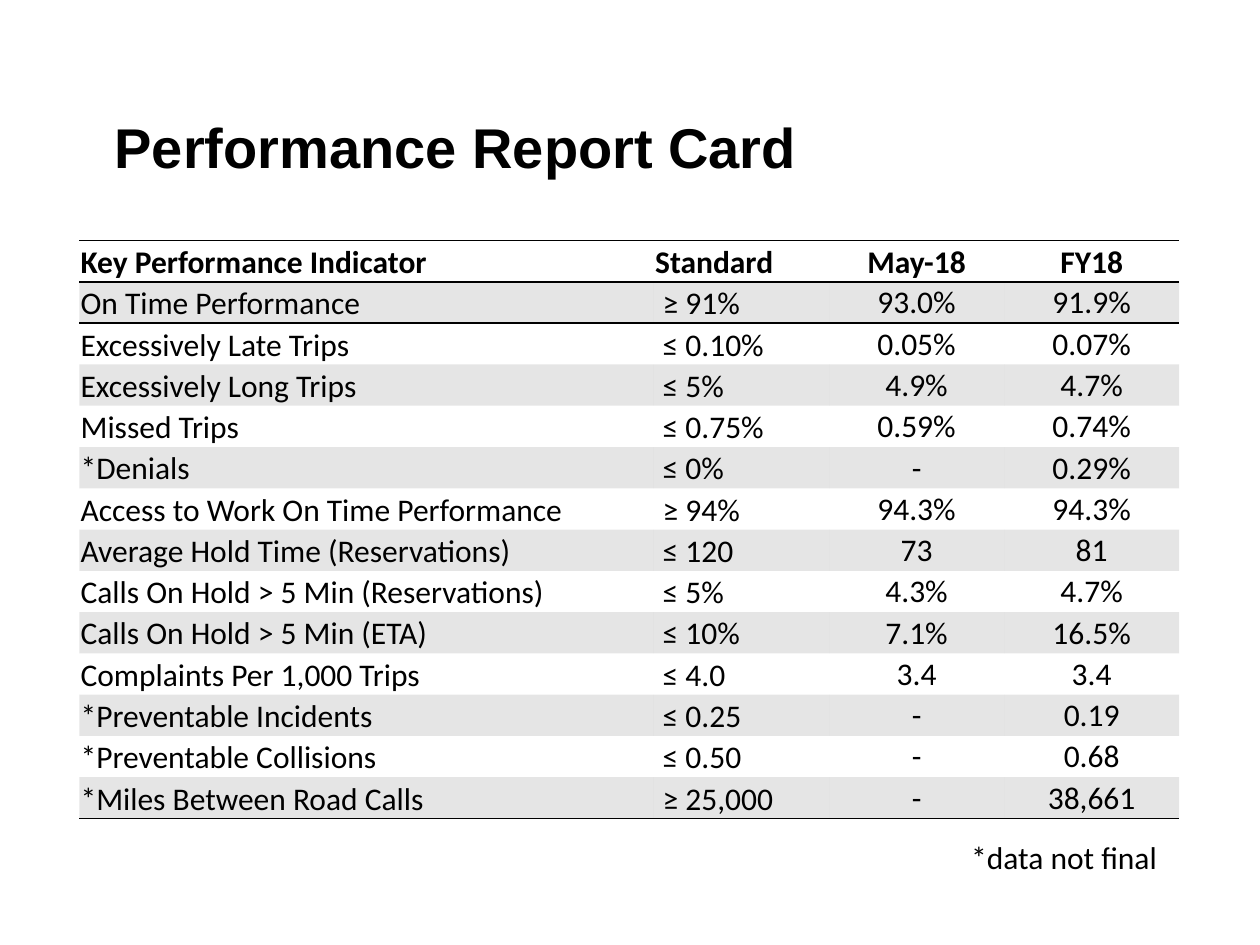
from dataclasses import dataclass

from lxml import etree
from pptx import Presentation
from pptx import util as u
from pptx.dml import color
from pptx.enum import text
from pptx.oxml import ns


@dataclass(frozen=True)
class Theme:
    ink: str = "000000"
    band: str = "808080"
    band_alpha: int = 20
    title_font: str = "Arial"
    body_font: str = "Calibri"
    title_size: int = 32
    body_size: int = 18
    rule_width: int = 1


THEME = Theme()
PLAIN_STYLE = "{2D5ABB26-0587-4C30-8999-92F81FD0307C}"
COLUMN_WIDTHS = (4.56, 1.39, 1.39, 1.39)
ROW_HEIGHT = 4.59 / 14

# Header, then one row per indicator
REPORT = (
    ("Key Performance Indicator", "Standard", "May-18", "FY18"),
    ("On Time Performance", "≥ 91%", "93.0%", "91.9%"),
    ("Excessively Late Trips", "≤ 0.10%", "0.05%", "0.07%"),
    ("Excessively Long Trips", "≤ 5%", "4.9%", "4.7%"),
    ("Missed Trips", "≤ 0.75%", "0.59%", "0.74%"),
    ("*Denials", "≤ 0%", "-", "0.29%"),
    ("Access to Work On Time Performance", "≥ 94%", "94.3%", "94.3%"),
    ("Average Hold Time (Reservations)", "≤ 120", "73", "81"),
    ("Calls On Hold > 5 Min (Reservations)", "≤ 5%", "4.3%", "4.7%"),
    ("Calls On Hold > 5 Min (ETA)", "≤ 10%", "7.1%", "16.5%"),
    ("Complaints Per 1,000 Trips", "≤ 4.0", "3.4", "3.4"),
    ("*Preventable Incidents", "≤ 0.25", "-", "0.19"),
    ("*Preventable Collisions", "≤ 0.50", "-", "0.68"),
    ("*Miles Between Road Calls", "≥ 25,000", "-", "38,661"),
)


def set_all(target, values):
    for name, value in values.items():
        setattr(target, name, value)


def write(frame, words, align, font, size, bold=False):
    para = frame.paragraphs[0]
    para.alignment = align
    span = para.add_run()
    span.text = words
    set_all(span.font, {"name": font, "size": u.Pt(size), "bold": bold})
    span.font.color.rgb = color.RGBColor.from_string(THEME.ink)


def place(shape, left, top, width, height):
    set_all(shape, {"left": u.Inches(left), "top": u.Inches(top),
                    "width": u.Inches(width), "height": u.Inches(height)})


def add_title(page, words):
    title = page.shapes.title
    place(title, 0.81, 0.84, 8.39, 0.64)
    title.text_frame.vertical_anchor = text.MSO_ANCHOR.MIDDLE
    write(title.text_frame, words, text.PP_ALIGN.LEFT,
          THEME.title_font, THEME.title_size, True)


def add_rules(cell, tags):
    """Draw cell borders; they come before the fill in the cell properties."""
    properties = cell._tc.get_or_add_tcPr()
    for position, tag in enumerate(tags):
        line = etree.Element(ns.qn(tag), w=str(u.Pt(THEME.rule_width)))
        fill = etree.SubElement(line, ns.qn("a:solidFill"))
        etree.SubElement(fill, ns.qn("a:srgbClr"), val=THEME.ink)
        properties.insert(position, line)


def fill_cell(cell, shaded):
    if not shaded:
        cell.fill.background()
        return
    cell.fill.solid()
    cell.fill.fore_color.rgb = color.RGBColor.from_string(THEME.band)
    tint = cell._tc.tcPr.find(".//" + ns.qn("a:srgbClr"))
    etree.SubElement(tint, ns.qn("a:alpha"), val=str(THEME.band_alpha * 1000))


def format_cell(cell, words, row, column):
    header, numeric = row == 0, column > 1
    indented = column == 1 and not header
    middle = numeric and not header
    set_all(cell, {
        "margin_left": u.Inches(0.07 if indented else 0.01),
        "margin_right": u.Inches(0.01),
        "margin_top": u.Inches(0.01),
        "margin_bottom": 0,
        "vertical_anchor": text.MSO_ANCHOR.MIDDLE if middle else text.MSO_ANCHOR.BOTTOM,
    })
    align = text.PP_ALIGN.CENTER if numeric else text.PP_ALIGN.LEFT
    write(cell.text_frame, words, align, THEME.body_font, THEME.body_size, header)
    fill_cell(cell, row % 2 == 1)
    if header:
        add_rules(cell, ("a:lnT", "a:lnB"))
    elif row == 1:
        add_rules(cell, ("a:lnT",))
    elif row == len(REPORT) - 1:
        add_rules(cell, ("a:lnB",))


def add_report(page):
    frame = page.shapes.add_table(
        len(REPORT), len(COLUMN_WIDTHS), u.Inches(0.63), u.Inches(1.91),
        u.Inches(sum(COLUMN_WIDTHS)), u.Inches(ROW_HEIGHT * len(REPORT)))
    table = frame.table
    set_all(table, {"first_row": False, "horz_banding": False})
    table._tbl.tblPr.find(ns.qn("a:tableStyleId")).text = PLAIN_STYLE
    for column, width in zip(table.columns, COLUMN_WIDTHS):
        column.width = u.Inches(width)
    for row, entries in enumerate(REPORT):
        table.rows[row].height = u.Inches(ROW_HEIGHT)
        for column, words in enumerate(entries):
            format_cell(table.cell(row, column), words, row, column)


def add_footnote(page, words):
    box = page.shapes.add_textbox(u.Inches(6.1), u.Inches(6.6),
                                  u.Inches(3.18), u.Inches(0.4))
    set_all(box.text_frame, {"word_wrap": True,
                             "auto_size": text.MSO_AUTO_SIZE.SHAPE_TO_FIT_TEXT})
    write(box.text_frame, words, text.PP_ALIGN.RIGHT,
          THEME.body_font, THEME.body_size)


def main():
    deck = Presentation()
    set_all(deck, {"slide_width": u.Inches(10), "slide_height": u.Inches(7.5)})
    page = deck.slides.add_slide(deck.slide_layouts[5])
    add_title(page, "Performance Report Card")
    add_report(page)
    add_footnote(page, "*data not final")
    deck.save("out.pptx")


if __name__ == "__main__":
    main()
